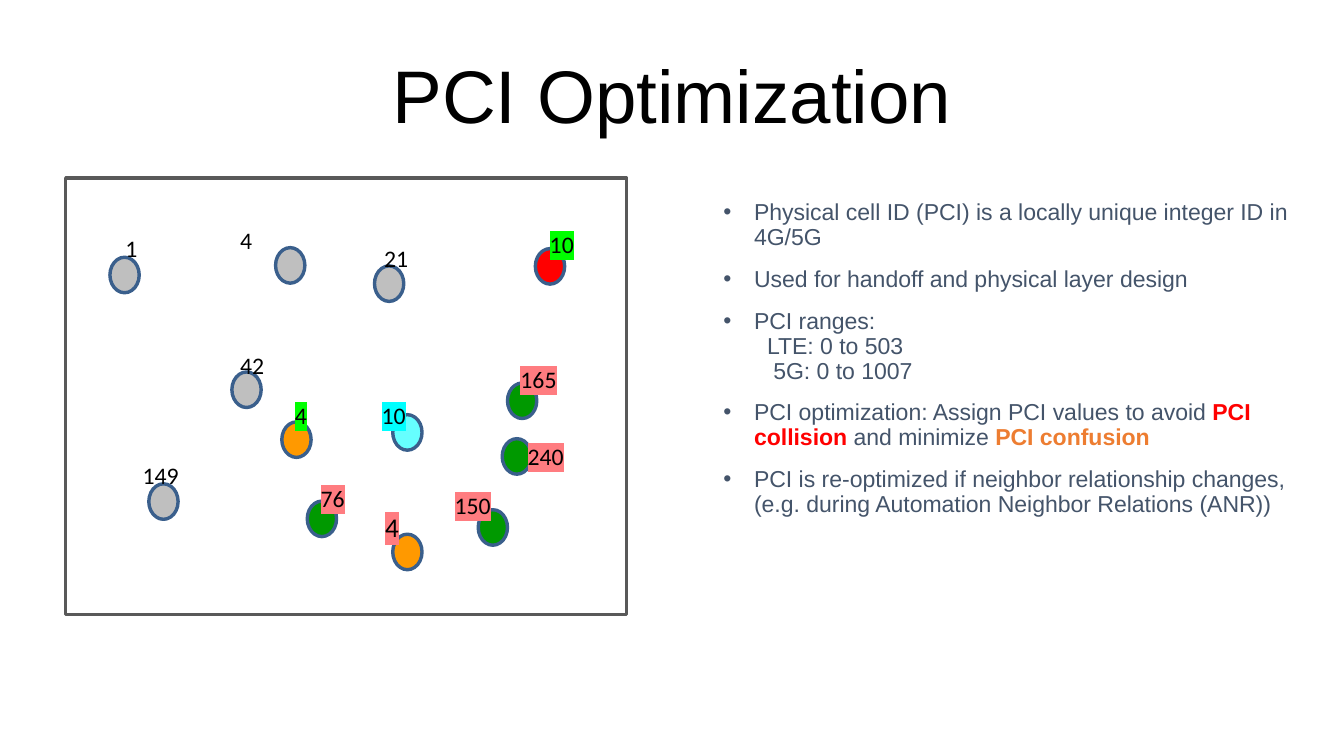
"""Builds the PCI Optimization slide with a map of numbered cells."""
from lxml.etree import SubElement
from pptx import Presentation
from pptx.dml.color import RGBColor
from pptx.enum.shapes import MSO_SHAPE as Shape
from pptx.enum.text import MSO_ANCHOR as Anchor, MSO_AUTO_SIZE as AutoSize, PP_ALIGN as Align
from pptx.oxml.ns import qn
from pptx.util import Cm, Pt

BLACK = RGBColor(0x00, 0x00, 0x00)
SLATE = RGBColor(0x44, 0x54, 0x6A)
FRAME = RGBColor(0x59, 0x59, 0x59)
OUTLINE = RGBColor(0x3A, 0x5F, 0x8C)
GREY = RGBColor(0xBF, 0xBF, 0xBF)
RED = RGBColor(0xFF, 0x00, 0x00)
AQUA = RGBColor(0x66, 0xFF, 0xFF)
GREEN = RGBColor(0x00, 0x99, 0x00)
AMBER = RGBColor(0xFF, 0x99, 0x00)
ORANGE = RGBColor(0xED, 0x7D, 0x31)
LIME = RGBColor(0x00, 0xFF, 0x00)
CYAN = RGBColor(0x00, 0xFF, 0xFF)
PINK = RGBColor(0xFF, 0x7C, 0x80)

CELLS = [
    ("4", GREY, (5.74, 5.16), (4.75, 4.57), None, 14),
    ("10", RED, (11.15, 5.18), (11.2, 4.67), LIME, 14),
    ("10", AQUA, (8.18, 8.64), (7.7, 8.23), CYAN, 14),
    ("42", GREY, (4.83, 7.75), (4.75, 7.19), None, 14),
    ("1", GREY, (2.29, 5.36), (2.36, 4.75), None, 14),
    ("76", GREEN, (6.4, 10.44), (6.43, 9.96), PINK, 14),
    ("21", GREY, (7.8, 5.54), (7.75, 4.95), None, 14),
    ("165", GREEN, (10.57, 7.98), (10.59, 7.47), PINK, 14),
    ("150", GREEN, (9.96, 10.62), (9.22, 10.11), PINK, 14),
    ("149", GREY, (3.1, 10.08), (2.72, 9.47), None, 14),
    ("4", AMBER, (5.87, 8.79), (5.89, 8.23), LIME, 14),
    ("4", AMBER, (8.18, 11.13), (7.77, 10.52), PINK, 16),
    ("240", GREEN, (10.46, 9.14), (10.74, 9.07), PINK, 14),
]

BULLET = 0
POINTS = [
    (BULLET, [("Physical cell ID (PCI) is a locally unique integer ID in 4G/5G", None)]),
    (BULLET, [("Used for handoff and physical layer design", None)]),
    (BULLET, [("PCI ranges:", None)]),
    (0.27, [("LTE: 0 to 503", None)]),
    (0.4, [("5G: 0 to 1007", None)]),
    (BULLET, [("PCI optimization: Assign PCI values to avoid ", None), ("PCI collision ", RED),
              ("and minimize ", None), ("PCI confusion", ORANGE)]),
    (BULLET, [("PCI is re-optimized if neighbor relationship changes, "
               "(e.g. during Automation Neighbor Relations (ANR))", None)]),
]


class SlideBuilder:
    """Holds the style and the current slide."""

    text_font, label_font = "Arial", "Calibri"
    line_width = Pt(2)
    bullet_indent = 0.64

    def __init__(self, deck):
        self.page = deck.slides.add_slide(deck.slide_layouts[1])

    def place(self, box, left, top, width, height):
        box.left, box.top, box.width, box.height = map(Cm, (left, top, width, height))

    def style(self, font, name, size, color):
        font.name, font.size = name, Pt(size)
        font.color.rgb = color

    def title(self, text, area):
        box = self.page.shapes.title
        self.place(box, *area)
        frame = box.text_frame
        frame.auto_size = AutoSize.NONE
        frame.vertical_anchor = Anchor.MIDDLE
        frame.margin_left = frame.margin_right = frame.margin_top = frame.margin_bottom = 0
        frame.text = text
        para = frame.paragraphs[0]
        para.alignment = Align.CENTER
        self.style(para.font, self.text_font, 44, BLACK)

    def points(self, items, area):
        box = self.page.placeholders[1]
        self.place(box, *area)
        frame = box.text_frame
        frame.auto_size = AutoSize.NONE
        for number, (indent, spans) in enumerate(items):
            para = frame.add_paragraph() if number else frame.paragraphs[0]
            para.line_spacing = 0.9
            para.space_before = Pt(10 if indent == BULLET else 0)
            layout = para._p.get_or_add_pPr()
            layout.set("marL", str(Cm(self.bullet_indent + indent)))
            layout.set("indent", str(-Cm(self.bullet_indent) if indent == BULLET else 0))
            if indent != BULLET:
                SubElement(layout, qn("a:buNone"))
            self.style(para.font, self.text_font, 13.6, SLATE)
            for text, accent in spans:
                span = para.add_run()
                span.text = text
                if accent:
                    span.font.bold = True
                    span.font.color.rgb = accent

    def shape(self, kind, area, line, fill=None):
        shape = self.page.shapes.add_shape(kind, *map(Cm, area))
        shape.shadow.inherit = False
        shape.line.color.rgb = line
        shape.line.width = self.line_width
        if fill:
            shape.fill.solid()
            shape.fill.fore_color.rgb = fill
        else:
            shape.fill.background()

    def label(self, text, left, top, highlight, size):
        width = 0.5 + 0.32 * len(text)
        box = self.page.shapes.add_textbox(*map(Cm, (left, top, width, 0.06 * size)))
        frame = box.text_frame
        frame.word_wrap = False
        frame.auto_size = AutoSize.SHAPE_TO_FIT_TEXT
        para = frame.paragraphs[0]
        self.style(para.font, self.label_font, size, BLACK)
        span = para.add_run()
        span.text = text
        if highlight:
            mark = SubElement(span._r.get_or_add_rPr(), qn("a:highlight"))
            SubElement(mark, qn("a:srgbClr"), val=str(highlight))

    def cell(self, text, fill, spot, label_spot, highlight, size):
        self.shape(Shape.OVAL, (*spot, 0.61, 0.74), OUTLINE, fill)
        self.label(text, *label_spot, highlight, size)


def main():
    deck = Presentation()
    deck.slide_width, deck.slide_height = Cm(27.99), Cm(15.75)
    slide = SlideBuilder(deck)
    slide.title("PCI Optimization", (1.4, 0.64, 25.2, 2.64))
    slide.points(POINTS, (14.81, 4.06, 12.29, 9.14))
    slide.shape(Shape.RECTANGLE, (1.37, 3.71, 11.68, 9.09), FRAME)
    for cell in CELLS:
        slide.cell(*cell)
    deck.save("out.pptx")


if __name__ == "__main__":
    main()
